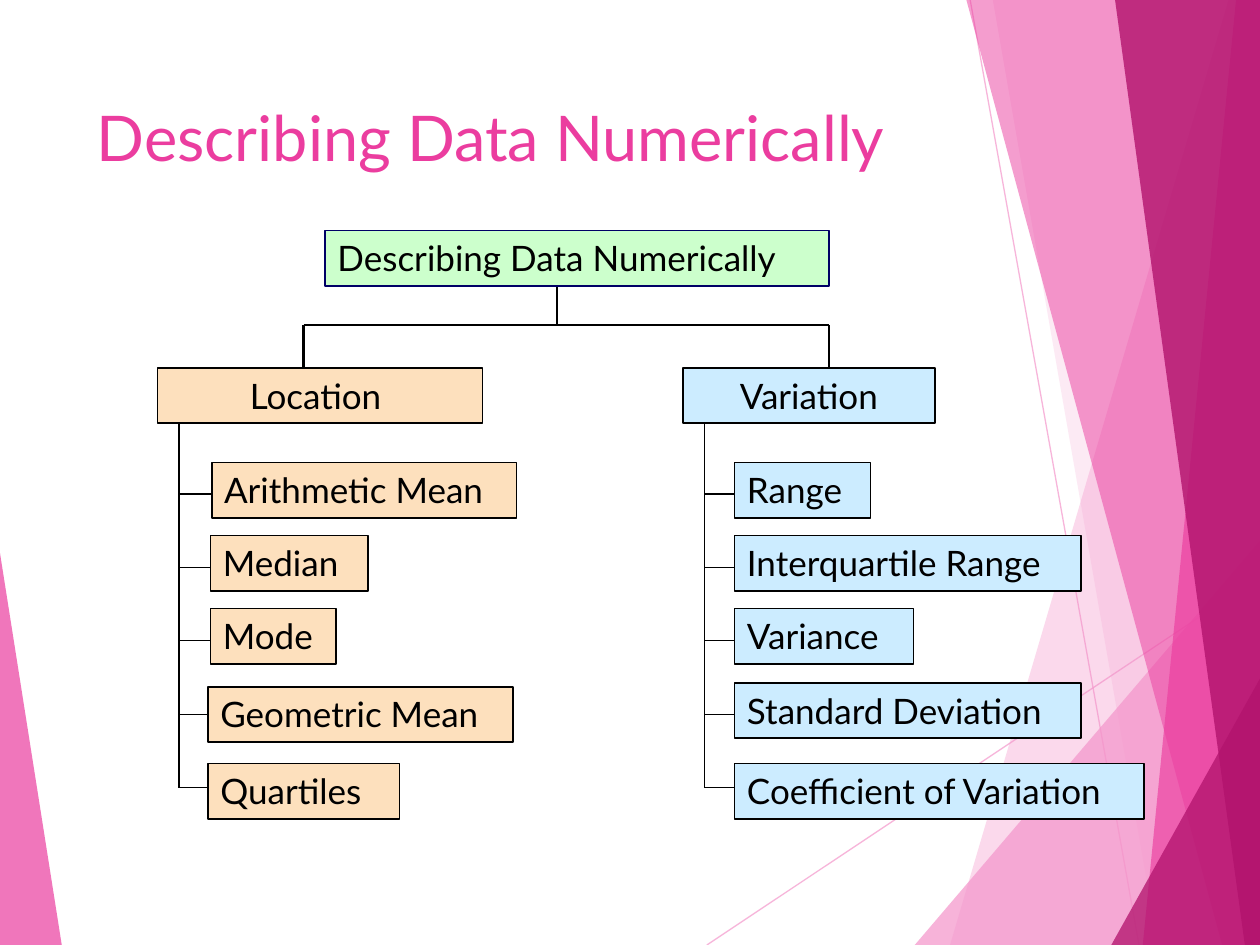
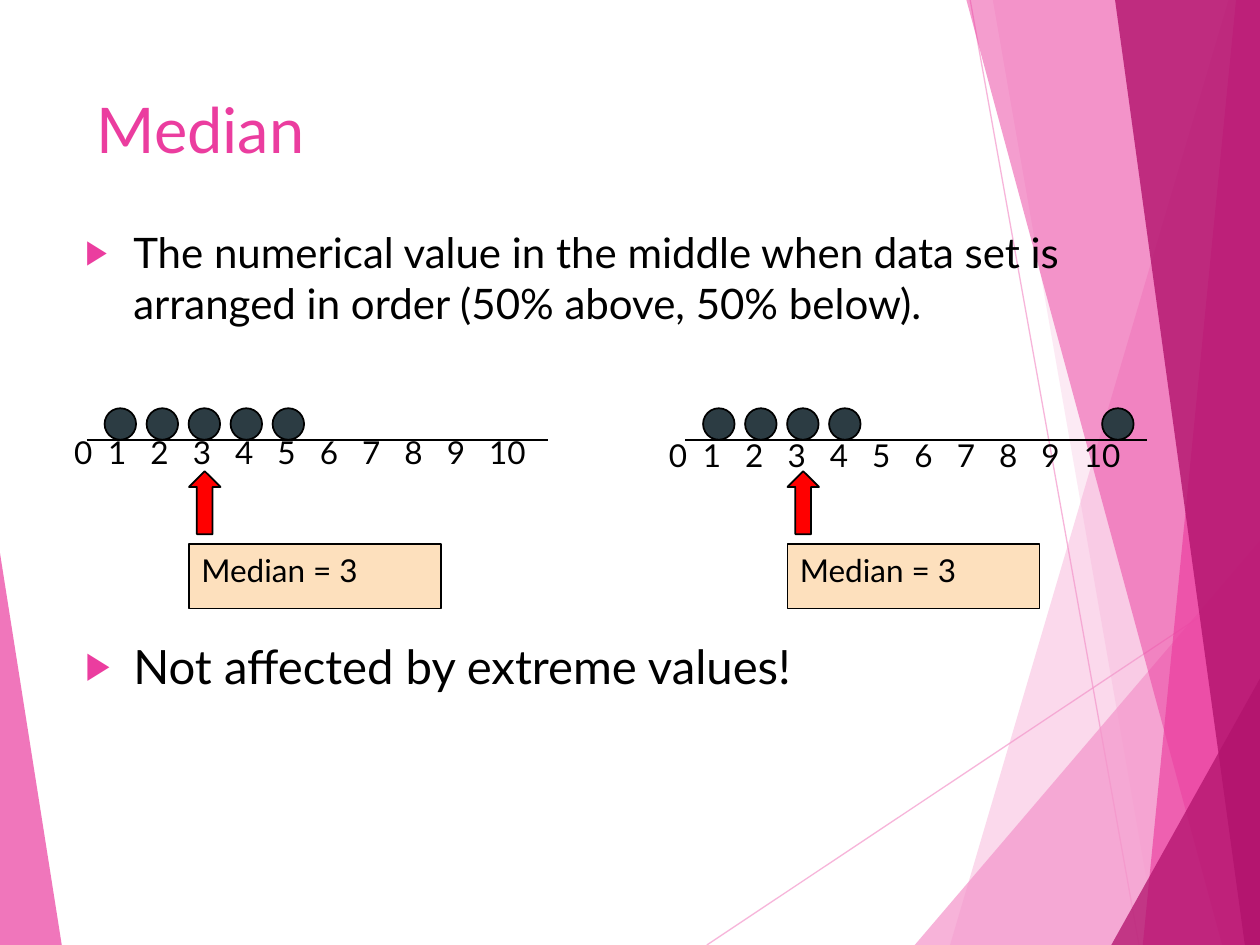
from lxml import etree
from pptx import Presentation
from pptx.dml.color import RGBColor
from pptx.enum import shapes, text
from pptx.oxml import ns
from pptx.util import Inches, Pt

FONT = "Lato"
BLACK, WHITE = "000000", "FFFFFF"
PALE, PINK, PLUM = "F496CB", "EB3D9F", "B2136D"
PEACH, SKY, MINT = "FDE0BD", "CCECFF", "CCFFCC"
NAVY, SLATE, RED = "000066", "2C3C43", "FF0000"
SHAPE = shapes.MSO_SHAPE

# Background bands: colour, opacity in percent, corner points
BANDS = [
    (PALE, 36, [(9.75, 0), (7.54, 7.5), (10.02, 7.5), (10.01, 0)]),
    (PALE, 20, [(7.88, 0), (9.19, 7.5), (10.01, 7.5), (10.01, 0)]),
    (PALE, 72, [(7.26, 7.5), (10, 4.29), (10.01, 7.5)]),
    (PINK, 50, [(7.67, 0), (9.7, 7.5), (10.01, 7.5), (10.01, 0)]),
    (PINK, 66, [(9.81, 0), (9.07, 7.5), (10.01, 7.5), (10, 0)]),
    (PLUM, 80, [(8.85, 0), (9.88, 7.5), (10.02, 7.5), (10, 0)]),
    (PLUM, 76, [(8.82, 7.5), (10.02, 5.35), (10.02, 7.5)]),
    (PINK, 70, [(0, 4.39), (0.49, 7.5), (0, 7.5)]),
]
RAYS = [(5.61, 7.5, 10.01, 4.57), (7.7, 0, 9.04, 7.5)]

# Children of each branch: label, left, top, width
PLACES = [
    ("Arithmetic Mean", 1.68, 3.67, 2.42),
    ("Median", 1.67, 4.25, 1.25),
    ("Mode", 1.67, 4.83, 1),
    ("Geometric Mean", 1.65, 5.45, 2.42),
    ("Quartiles", 1.65, 6.06, 1.52),
]
SPREADS = [
    ("Range", 5.83, 3.67, 1.08),
    ("Interquartile Range", 5.83, 4.25, 2.75),
    ("Variance", 5.83, 4.83, 1.42),
    ("Standard Deviation", 5.83, 5.42, 2.75),
    ("Coefficient of Variation", 5.83, 6.06, 3.25),
]


def color(code):
    return RGBColor.from_string(code)


def fade(fill, percent):
    """Make a solid fill or line fill partly transparent."""
    tone = fill._xPr.find(ns.qn("a:solidFill"))[0]
    etree.SubElement(tone, ns.qn("a:alpha"), val=str(percent * 1000))


def style(run, size, code=BLACK):
    run.font.name = FONT
    run.font.size = Pt(size)
    run.font.color.rgb = color(code)


def line(slide, x1, y1, x2, y2, width, code=BLACK):
    link = slide.shapes.add_connector(
        shapes.MSO_CONNECTOR.STRAIGHT, *map(Inches, (x1, y1, x2, y2)))
    link.line.color.rgb = color(code)
    link.line.width = Pt(width)
    etree.SubElement(link._element.spPr, ns.qn("a:effectLst"))
    return link


def solid(slide, kind, box, fill, edge=BLACK):
    item = slide.shapes.add_shape(kind, *map(Inches, box))
    item.shadow.inherit = False
    item.fill.solid()
    item.fill.fore_color.rgb = color(fill)
    item.line.color.rgb = color(edge)
    item.line.width = Pt(1)
    return item


def label(slide, box, words, fill, size=20, edge=BLACK, center=False):
    """Draw a filled box with one line of text at its top."""
    frame = solid(slide, SHAPE.RECTANGLE, box, fill, edge).text_frame
    frame.word_wrap = True
    frame.vertical_anchor = text.MSO_ANCHOR.TOP
    frame.text = words
    para = frame.paragraphs[0]
    para.alignment = text.PP_ALIGN.CENTER if center else text.PP_ALIGN.LEFT
    style(para.runs[0], size)


def note(slide, box, lines, size, code=BLACK):
    """Add a plain text box and return its paragraphs."""
    frame = slide.shapes.add_textbox(*map(Inches, box)).text_frame
    frame.word_wrap = True
    frame.text = "\n".join(lines)
    for para in frame.paragraphs:
        for run in para.runs:
            style(run, size, code)
    return frame.paragraphs


def bullet(para):
    props = para._p.get_or_add_pPr()
    props.set("marL", str(Inches(0.38)))
    props.set("indent", str(-Inches(0.38)))
    tint = etree.SubElement(props, ns.qn("a:buClr"))
    etree.SubElement(tint, ns.qn("a:srgbClr"), val=PINK)
    etree.SubElement(props, ns.qn("a:buSzPct"), val="80000")
    etree.SubElement(props, ns.qn("a:buFont"), typeface="Arial")
    etree.SubElement(props, ns.qn("a:buChar"), char="▶")


def tabs(para, stops):
    holder = etree.SubElement(para._p.get_or_add_pPr(), ns.qn("a:tabLst"))
    for stop in stops:
        etree.SubElement(holder, ns.qn("a:tab"), pos=str(Inches(stop)), algn="l")


def start(deck, title):
    """Add a slide with the shared background and title."""
    slide = deck.slides.add_slide(deck.slide_layouts[6])
    slide.background.fill.solid()
    slide.background.fill.fore_color.rgb = color(WHITE)
    for ray in RAYS:
        fade(line(slide, *ray, 0.75, PALE).line.fill, 70)
    for code, percent, points in BANDS:
        spots = [(Inches(x), Inches(y)) for x, y in points]
        path = slide.shapes.build_freeform(*spots[0])
        path.add_line_segments(spots[1:])
        band = path.convert_to_shape()
        band.shadow.inherit = False
        band.fill.solid()
        band.fill.fore_color.rgb = color(code)
        fade(band.fill, percent)
        band.line.fill.background()
    head = note(slide, (0.67, 0.67, 6.94, 1.44), [title], 36, PINK)[0]
    return slide, head


def branch(slide, x, width, title, fill, items):
    """Draw a heading whose children hang from a trunk at its left."""
    trunk, first, step = x + 0.17, 3.92, 0.583
    line(slide, trunk, 3.33, trunk, first + 4 * step, 0.75)
    for row, (words, left, top, wide) in enumerate(items):
        y = first + row * step
        line(slide, trunk, y, left, y, 0.75)
        label(slide, (left, top, wide, 0.44), words, fill)
    label(slide, (x, 2.92, width, 0.44), title, fill, center=True)


def tree(deck):
    slide, head = start(deck, "Describing Data Numerically")
    head.line_spacing = 1.1
    left, mid, right, bar = 2.41, 4.42, 6.58, 2.58
    line(slide, mid, 2.25, mid, bar, 1.5)
    line(slide, left, bar, right, bar, 1.5)
    for x in (left, right):
        line(slide, x, bar, x, 2.92, 1.5)
    label(slide, (2.58, 1.83, 4, 0.44), "Describing Data Numerically",
          MINT, edge=NAVY)
    branch(slide, 1.25, 2.58, "Location ", PEACH, PLACES)
    branch(slide, 5.42, 2, "Variation", SKY, SPREADS)


def plot(slide, x, scale, slots):
    """Draw a dot plot from x; scale is the corner of its number row."""
    axis, dot, step = 3.49, 0.25, 1 / 3
    line(slide, x, axis, x + 3.66, axis, 1)
    row = note(slide, (*scale, 4.36, 0.4),
               ["\t".join(str(n) for n in range(11))], 18)[0]
    tabs(row, [0.27 + 0.336 * n for n in range(10)])
    for slot in slots:
        spot = x + 0.14 + (slot - 1) * step
        solid(slide, SHAPE.OVAL, (spot, axis - dot, dot, dot), SLATE)
    solid(slide, SHAPE.UP_ARROW, (x + 0.81, 3.74, 0.25, 0.5), RED)
    label(slide, (x + 0.81, 4.32, 2, 0.51), "Median = 3", PEACH, size=18)


def median(deck):
    slide, _ = start(deck, "Median")
    body = note(slide, (0.58, 1.75, 9.17, 5.5), [
        "The numerical value in the middle when data set is "
        "arranged in order (50% above, 50% below).",
        "Not affected by extreme values!"], 24)
    body[1].space_before = Pt(177)
    body[1].runs[0].font.size = Pt(27)
    for para in body:
        bullet(para)
    plot(slide, 0.69, (0.49, 3.39), (1, 2, 3, 4, 5))
    plot(slide, 5.44, (5.21, 3.41), (1, 2, 3, 4, 10.5))


def main():
    deck = Presentation()
    deck.slide_width, deck.slide_height = Inches(10), Inches(7.5)
    tree(deck)
    median(deck)
    deck.save("out.pptx")


if __name__ == "__main__":
    main()
